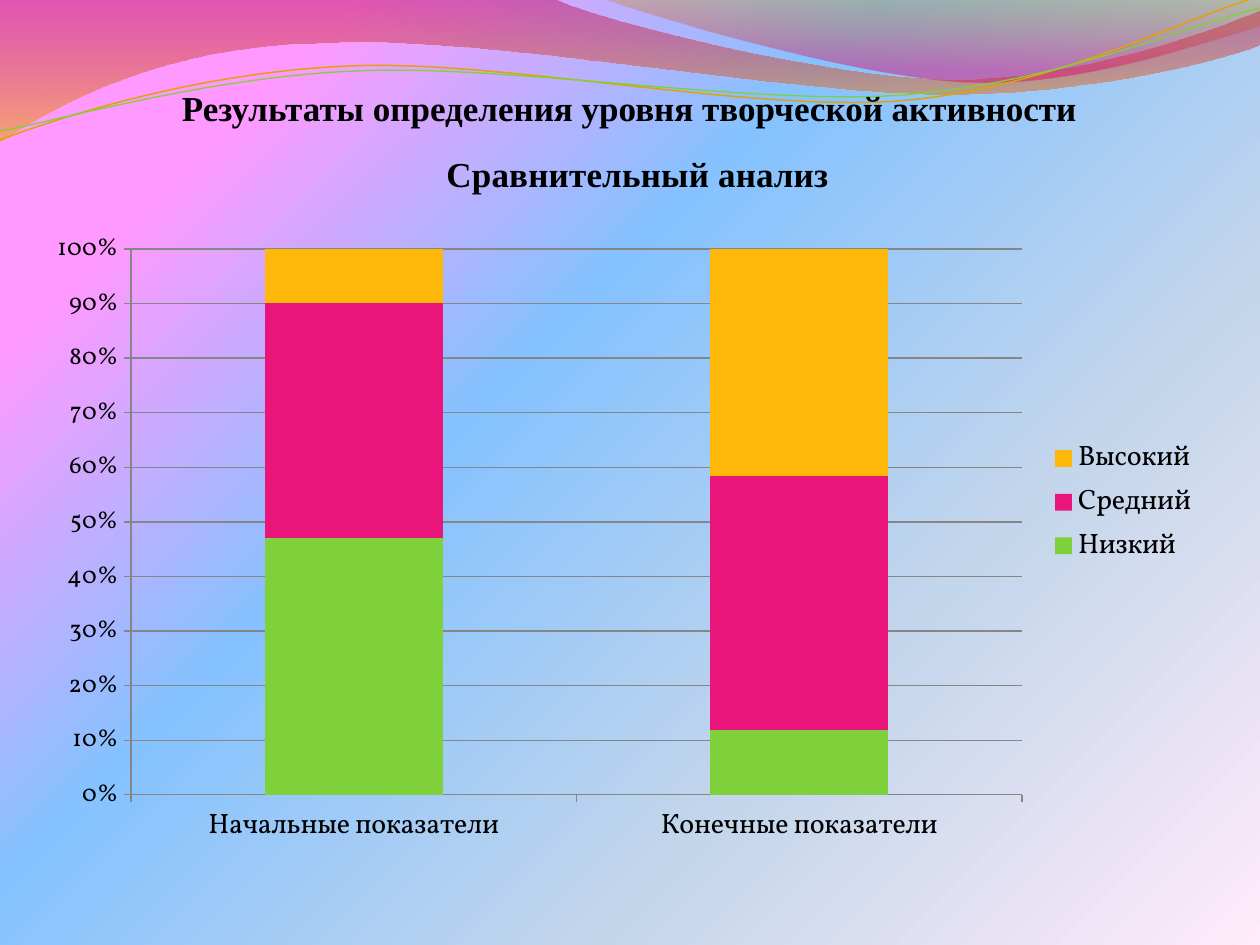
from lxml import etree
from pptx import Presentation
from pptx.chart.data import CategoryChartData
from pptx.dml.color import RGBColor
from pptx.enum.chart import XL_CHART_TYPE, XL_LEGEND_POSITION, XL_TICK_MARK
from pptx.enum.text import MSO_ANCHOR, PP_ALIGN
from pptx.oxml.ns import qn
from pptx.util import Emu, Pt

PIXEL = 914400 / 126
STACKED = XL_CHART_TYPE.COLUMN_STACKED_100
LEGEND_RIGHT = XL_LEGEND_POSITION.RIGHT
TICK_CROSS = XL_TICK_MARK.CROSS
TICK_OUTSIDE = XL_TICK_MARK.OUTSIDE
CENTER = PP_ALIGN.CENTER
MIDDLE = MSO_ANCHOR.MIDDLE
HEADING_FONT = "Times New Roman"
BODY_FONT = "Vollkorn"
COLORS = {
    "text": "000000", "grid": "868686",
    "low": "7FD13B", "medium": "EA157A", "high": "FEB80A",
    "gold_line": "E0A209", "green_line": "7FD13B",
    "crimson": "BD0059", "amber": "F0AB00", "olive": "C38B00", "rose": "E1006B",
    "pink": "FF99FF", "sky": "85C2FF", "mist": "C4D6EB", "blush": "FFEBFA",
}
BACKGROUND = [(16, "pink", 100), (40, "sky", 100), (70, "mist", 100), (100, "blush", 100)]
WAVES = [
    ([(0, 0), (554, -1),
      (600, 21, 837, 79, 955, 79), (1075, 79, 1207, 33, 1260, 11), (1261, 45),
      (1239, 55, 1096, 96, 940, 94), (784, 94, 481, 35, 324, 43),
      (163, 45, 58, 105, -1, 142)],
     [(0, "crimson", 45), (100, "amber", 55)]),
    ([(604, -1), (641, 14, 859, 78, 969, 82), (1079, 87, 1211, 40, 1260, 26), (1260, 0)],
     [(0, "olive", 30), (80, "rose", 45)]),
]
RIBBONS = [
    ([(0, 140), (60, 117, 199, 72, 349, 66), (498, 59, 747, 112, 898, 101),
      (1050, 89, 1182, 19, 1257, -3)], "gold_line", 0.85),
    ([(0, 131), (59, 121, 207, 77, 357, 71), (508, 64, 752, 106, 903, 95),
      (1053, 84, 1186, 26, 1260, 8)], "green_line", 0.75),
]
CATEGORIES = ["Начальные показатели", "Конечные показатели"]
SERIES = [
    ("Низкий", (47, 12), "low"),
    ("Средний", (43, 47), "medium"),
    ("Высокий", (10, 42), "high"),
]


def px(value):
    """Turn pixels into EMU."""
    return Emu(round(value * PIXEL))


def color(name):
    """Return a palette colour."""
    return RGBColor.from_string(COLORS[name])


def style_font(font, size, name, bold=False):
    """Set the face, size, weight and colour of a font."""
    font.size, font.name, font.bold = Pt(size), name, bold
    font.color.rgb = color("text")


def fill_gradient(fill, stops, angle):
    """Apply a linear gradient of (position, colour, opacity) stops."""
    fill.gradient()
    fill.gradient_angle = 360 - angle
    stop_list = fill._fill._gradFill.find(qn("a:gsLst"))
    for stop in list(stop_list):
        stop_list.remove(stop)
    for position, name, opacity in stops:
        stop = etree.SubElement(stop_list, qn("a:gs"), pos=str(position * 1000))
        value = etree.SubElement(stop, qn("a:srgbClr"), val=COLORS[name])
        if opacity < 100:
            etree.SubElement(value, qn("a:alpha"), val=str(opacity * 1000))


def add_outline(slide, left, top, segments, close):
    """Draw a freeform of lines and cubic curves from the given corner."""
    points = [(px(left + segment[i]), px(top + segment[i + 1]))
              for segment in segments for i in range(0, len(segment), 2)]
    builder = slide.shapes.build_freeform(*points[0], scale=1.0)
    builder.add_line_segments(points[1:], close=close)
    shape = builder.convert_to_shape()
    shape.shadow.inherit = False
    lines = iter(list(shape._element.iter(qn("a:lnTo"))))
    for segment in segments[1:]:
        line = next(lines)
        if len(segment) == 6:
            line.addprevious(etree.Element(qn("a:cubicBezTo")))
            curve = line.getprevious()
            for part in (line, next(lines), next(lines)):
                curve.append(part[0])
                part.getparent().remove(part)
    return shape


def add_decoration(slide, left, top):
    """Draw the translucent waves and the thin ribbons."""
    for segments, stops in WAVES:
        shape = add_outline(slide, left, top, segments, True)
        fill_gradient(shape.fill, stops, 90)
        shape.line.fill.background()
    for segments, name, width in RIBBONS:
        shape = add_outline(slide, left, top, segments, False)
        shape.fill.background()
        shape.line.color.rgb = color(name)
        shape.line.width = Pt(width)


def set_layout(element, chart_box, **lengths):
    """Place a chart part by pixel lengths inside the chart box."""
    for old in element.findall(qn("c:layout")):
        element.remove(old)
    layout = etree.Element(qn("c:layout"))
    manual = etree.SubElement(layout, qn("c:manualLayout"))
    if "w" in lengths:
        etree.SubElement(manual, qn("c:layoutTarget"), val="inner")
    for axis in "xy":
        etree.SubElement(manual, qn(f"c:{axis}Mode"), val="edge")
    for key, length in lengths.items():
        total = chart_box[2] if key in "xw" else chart_box[3]
        etree.SubElement(manual, qn(f"c:{key}"), val=str(length / total))
    overlay = element.find(qn("c:overlay"))
    successor = element[0] if overlay is None else overlay
    successor.addprevious(layout)


def style_axis(axis, size, tick_mark):
    """Set the line, ticks and labels of an axis."""
    axis.major_tick_mark = tick_mark
    axis.format.line.color.rgb = color("grid")
    axis.format.line.width = Pt(0.75)
    style_font(axis.tick_labels.font, size, BODY_FONT)


def add_comparison_chart(slide, box):
    """Add the stacked chart of activity levels."""
    data = CategoryChartData()
    data.categories = CATEGORIES
    for name, values, _ in SERIES:
        data.add_series(name, values)
    chart = slide.shapes.add_chart(STACKED, *map(px, box), data).chart
    style_font(chart.font, 10, BODY_FONT)

    paragraph = chart.chart_title.text_frame.paragraphs[0]
    style_font(paragraph.font, 20, HEADING_FONT, True)
    run = paragraph.add_run()
    run.text = "Сравнительный анализ"
    style_font(run.font, 20, HEADING_FONT, True)
    set_layout(chart.chart_title._element, box, x=405, y=0)

    plot = chart.plots[0]
    plot.gap_width, plot.overlap, plot.vary_by_categories = 150, 100, False
    for series, (_, _, name) in zip(plot.series, SERIES):
        series.format.fill.solid()
        series.format.fill.fore_color.rgb = color(name)
    set_layout(chart._chartSpace.chart.plotArea, box, x=96, y=104, w=891, h=546)

    style_axis(chart.category_axis, 16, TICK_OUTSIDE)
    style_axis(chart.value_axis, 14, TICK_OUTSIDE)
    chart.value_axis.major_unit = 0.1
    chart.value_axis.tick_labels.number_format = "0%"
    chart.value_axis.tick_labels.number_format_is_linked = False
    grid_line = chart.value_axis.major_gridlines.format.line
    grid_line.color.rgb = color("grid")
    grid_line.width = Pt(0.75)

    chart.has_legend = True
    chart.legend.position = LEGEND_RIGHT
    chart.legend.include_in_layout = False
    style_font(chart.legend.font, 16, BODY_FONT)
    set_layout(chart.legend._element, box, x=1011, y=289)


def add_heading(slide, box):
    """Add the centred slide heading."""
    frame = slide.shapes.add_textbox(*map(px, box)).text_frame
    frame.word_wrap = False
    frame.vertical_anchor = MIDDLE
    paragraph = frame.paragraphs[0]
    paragraph.alignment = CENTER
    run = paragraph.add_run()
    run.text = "Результаты определения уровня творческой активности"
    style_font(run.font, 20, HEADING_FONT, True)


def main():
    """Build and save the presentation."""
    presentation = Presentation()
    presentation.slide_width, presentation.slide_height = px(1260), px(945)
    slide = presentation.slides.add_slide(presentation.slide_layouts[6])
    fill_gradient(slide.background.fill, BACKGROUND, 45)
    add_decoration(slide, 0, 0)
    add_comparison_chart(slide, (35, 145, 1176, 714))
    add_heading(slide, (166, 80, 927, 55))
    presentation.save("out.pptx")


if __name__ == "__main__":
    main()
